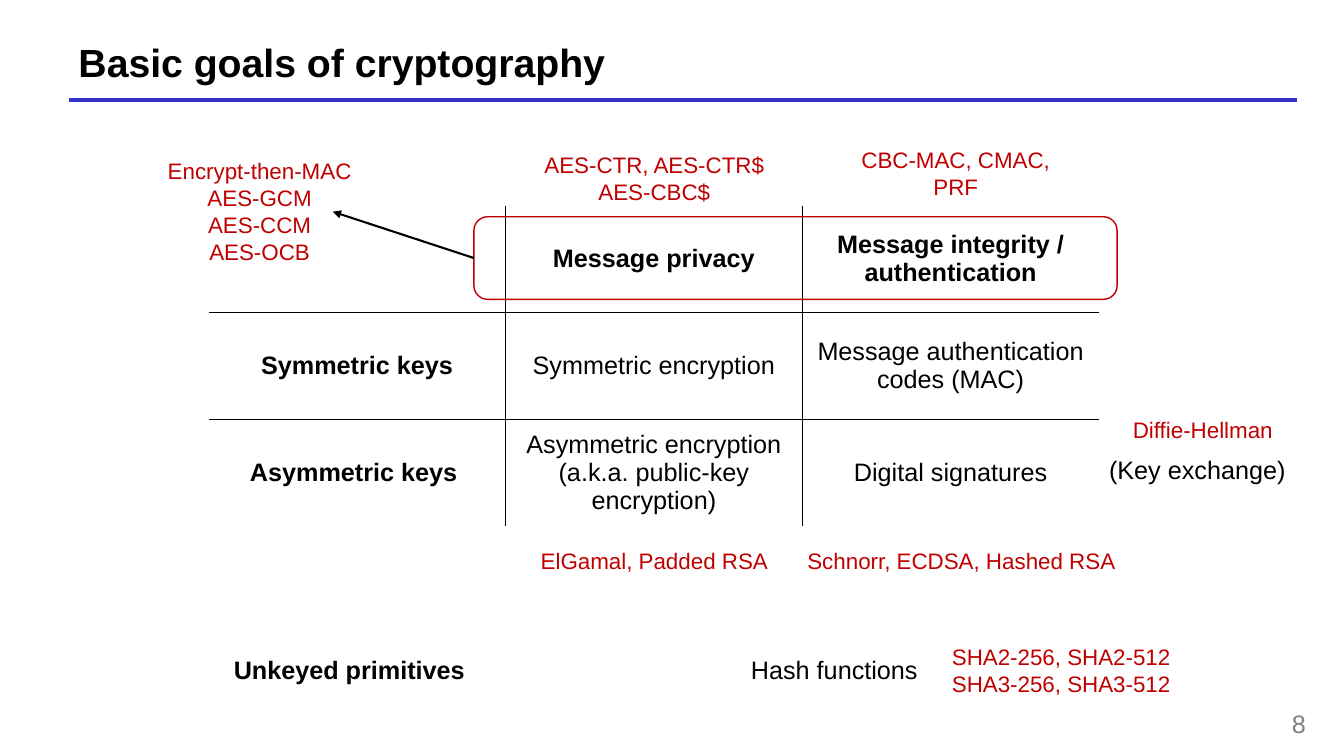
from lxml import etree
from pptx import Presentation
from pptx.dml.color import RGBColor
from pptx.enum.shapes import MSO_CONNECTOR, MSO_SHAPE
from pptx.enum.text import MSO_ANCHOR, PP_ALIGN
from pptx.oxml.ns import qn
from pptx.util import Inches, Pt

BLACK, WHITE, RED = "000000", "FFFFFF", "C00000"
GOALS = [
    ["", "Message privacy", "Message integrity / authentication"],
    ["Symmetric keys", "Symmetric encryption", "Message authentication codes (MAC)"],
    ["Asymmetric keys ", "Asymmetric encryption (a.k.a. public-key encryption)",
     "Digital signatures"],
]
SCHEMES = [
    ("Encrypt-then-MAC\nAES-GCM\nAES-CCM\nAES-OCB", (1.55, 1.51, 2.05, 1.18)),
    ("AES-CTR, AES-CTR$\nAES-CBC$", (5.29, 1.45, 2.4, 0.64)),
    ("CBC-MAC, CMAC,\nPRF", (8.43, 1.4, 2.1, 0.64)),
    ("ElGamal, Padded RSA", (5.25, 5.38, 2.48, 0.37)),
    ("Schnorr, ECDSA, Hashed RSA ", (7.89, 5.38, 3.34, 0.37)),
    ("Diffie-Hellman", (11.13, 4.08, 1.6, 0.37)),
    ("SHA2-256, SHA2-512\nSHA3-256, SHA3-512", (9.33, 6.33, 2.39, 0.64)),
]


def rgb(color):
    return RGBColor.from_string(color)


def write(frame, text, size=18, color=BLACK, bold=False, align=PP_ALIGN.CENTER):
    """Fill a text frame, one paragraph for each line of text."""
    frame.text = text
    for paragraph in frame.paragraphs:
        paragraph.alignment = align
        for run in paragraph.runs:
            run.font.name = "Arial"
            run.font.size = Pt(size)
            run.font.bold = bold
            run.font.color.rgb = rgb(color)


def add_label(slide, text, box, wrap=False, anchor=MSO_ANCHOR.TOP, **text_format):
    frame = slide.shapes.add_textbox(*map(Inches, box)).text_frame
    frame.word_wrap = wrap
    frame.vertical_anchor = anchor
    write(frame, text, **text_format)


def add_outline(slide, kind, box, color):
    outline = slide.shapes.add_shape(kind, *map(Inches, box))
    outline.shadow.inherit = False
    outline.fill.background()
    outline.line.color.rgb = rgb(color)
    outline.line.width = Pt(1)
    return outline


def add_line(slide, start, end, color, width, arrow=False):
    line = slide.shapes.add_connector(MSO_CONNECTOR.STRAIGHT, *map(Inches, start + end))
    line.line.color.rgb = rgb(color)
    line.line.width = Pt(width)
    if arrow:
        etree.SubElement(line.line._get_or_add_ln(), qn("a:tailEnd"), type="triangle")
    etree.SubElement(line._element.spPr, qn("a:effectLst"))
    return line


def set_borders(cell, visible):
    """Draw thin black borders on the sides in visible and none on the others."""
    properties = cell._tc.get_or_add_tcPr()
    for index, side in enumerate("LRTB"):
        border = etree.Element(qn(f"a:ln{side}"), w=str(Pt(1)))
        if side in visible:
            fill = etree.SubElement(border, qn("a:solidFill"))
            etree.SubElement(fill, qn("a:srgbClr"), val=BLACK)
        else:
            etree.SubElement(border, qn("a:noFill"))
        properties.insert(index, border)


def add_goals_table(slide, rows, box):
    last_row, last_column = len(rows) - 1, len(rows[0]) - 1
    table = slide.shapes.add_table(len(rows), len(rows[0]), *map(Inches, box)).table
    table.first_row = table.horz_banding = False
    for i, row in enumerate(rows):
        for j, text in enumerate(row):
            cell = table.cell(i, j)
            cell.vertical_anchor = MSO_ANCHOR.MIDDLE
            cell.fill.background()
            write(cell.text_frame, text, bold=i == 0 or j == 0)
            inner = {"L": j > 0, "R": j < last_column, "T": i > 0, "B": i < last_row}
            set_borders(cell, [side for side, drawn in inner.items() if drawn])


def main():
    deck = Presentation()
    deck.slide_width, deck.slide_height = Inches(13.33), Inches(7.5)
    slide = deck.slides.add_slide(deck.slide_layouts[6])

    add_line(slide, (0.68, 0.99), (12.86, 0.99), "3333CC", 3)
    add_label(slide, "Basic goals of cryptography", (0.68, 0.36, 12.18, 0.5), wrap=True,
              anchor=MSO_ANCHOR.MIDDLE, size=28, bold=True, align=PP_ALIGN.LEFT)
    add_label(slide, "8", (12.43, 6.98, 0.62, 0.36), wrap=True,
              color="808080", align=PP_ALIGN.RIGHT)

    add_goals_table(slide, GOALS, (2.07, 2.04, 8.83, 3.18))
    add_label(slide, "(Key exchange)", (10.89, 4.46, 1.97, 0.4))

    both_goals = add_outline(slide, MSO_SHAPE.ROUNDED_RECTANGLE, (4.7, 2.15, 6.38, 0.82), RED)
    arrow = add_line(slide, (4.7, 2.56), (3.3, 2.1), BLACK, 1.5, arrow=True)
    arrow.begin_connect(both_goals, 1)

    unkeyed = add_outline(slide, MSO_SHAPE.RECTANGLE, (2.22, 6.34, 2.75, 0.61), WHITE)
    unkeyed.text_frame.vertical_anchor = MSO_ANCHOR.MIDDLE
    write(unkeyed.text_frame, "Unkeyed primitives", bold=True, align=PP_ALIGN.LEFT)
    add_label(slide, "Hash functions", (7.34, 6.44, 1.87, 0.4))

    for names, box in SCHEMES:
        add_label(slide, names, box, size=16, color=RED)

    deck.save("out.pptx")


if __name__ == "__main__":
    main()
